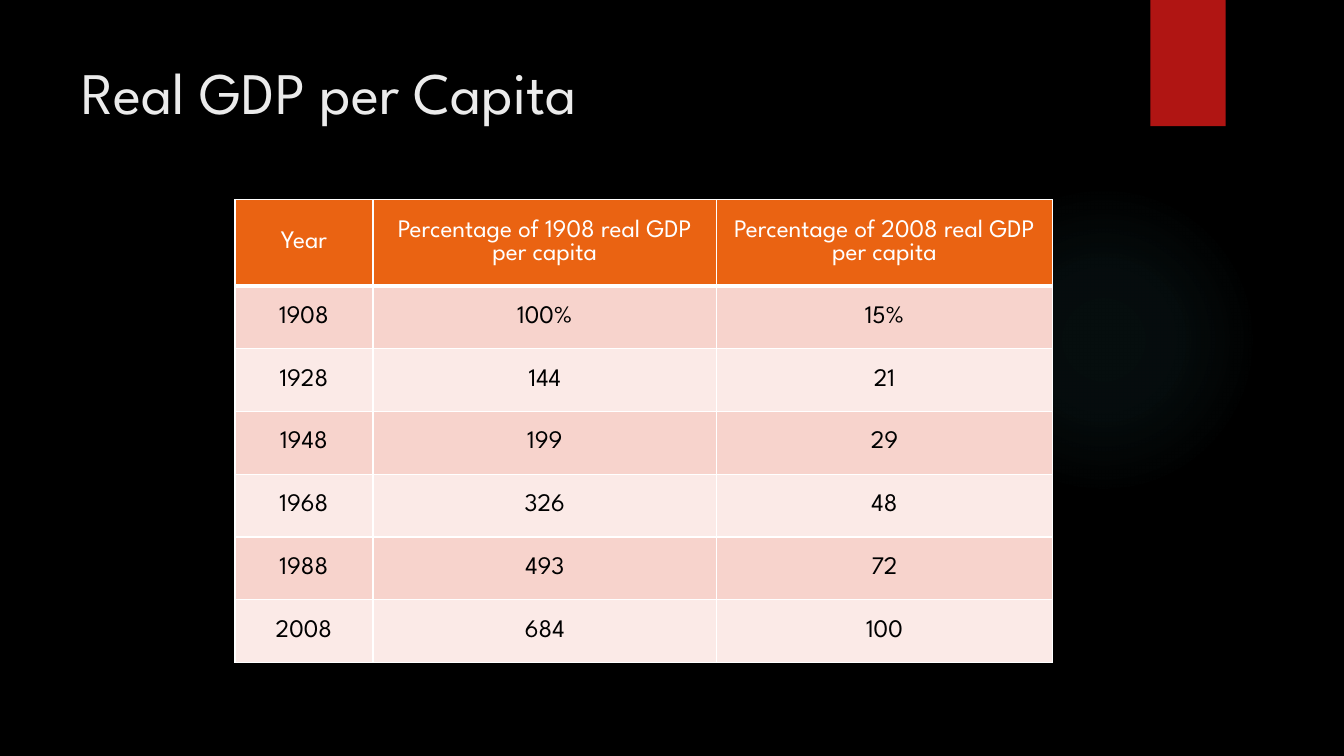
import pptx
import pptx.dml.color
import pptx.enum.shapes
import pptx.enum.text
import pptx.oxml
import pptx.oxml.ns
import pptx.util

Cm = pptx.util.Cm
RGBColor = pptx.dml.color.RGBColor

FONT = "League Spartan"
BLACK = RGBColor(0x00, 0x00, 0x00)
WHITE = RGBColor(0xFF, 0xFF, 0xFF)
TITLE_GREY = RGBColor(0xEB, 0xEB, 0xEB)
RED = RGBColor(0xB0, 0x15, 0x13)
GLOW_TEAL = RGBColor(0x50, 0xB9, 0xC1)
ORANGE = RGBColor(0xEA, 0x63, 0x12)
DARK_BAND = RGBColor(0xF7, 0xD3, 0xCC)
LIGHT_BAND = RGBColor(0xFB, 0xEA, 0xE7)

ROWS = [
    ("Year", "Percentage of 1908 real GDP per capita", "Percentage of 2008 real GDP per capita"),
    ("1908", "100%", "15%"),
    ("1928", "144", "21"),
    ("1948", "199", "29"),
    ("1968", "326", "48"),
    ("1988", "493", "72"),
    ("2008", "684", "100"),
]
COLUMN_WIDTHS = [3.48, 8.66, 8.46]
HEADER_HEIGHT, ROW_HEIGHT = 2.18, 1.58


def write_text(text_frame, text, size, color, alignment):
    paragraph = text_frame.paragraphs[0]
    paragraph.alignment = alignment
    run = paragraph.add_run()
    run.text = text
    run.font.name = FONT
    run.font.size = pptx.util.Pt(size)
    run.font.bold = False
    run.font.color.rgb = color


def add_plain_shape(kind, left, top, width, height):
    shape = slide.shapes.add_shape(kind, Cm(left), Cm(top), Cm(width), Cm(height))
    shape.shadow.inherit = False
    shape.line.fill.background()
    return shape


presentation = pptx.Presentation()
presentation.slide_width = Cm(33.87)
presentation.slide_height = Cm(19.05)
slide = presentation.slides.add_slide(presentation.slide_layouts[5])
slide.background.fill.solid()
slide.background.fill.fore_color.rgb = BLACK

# Faint round glow that fades out towards its edge
glow = add_plain_shape(pptx.enum.shapes.MSO_SHAPE.OVAL, 23.9, 4.65, 7.82, 7.82)
stops = "".join(
    f'<a:gs pos="{position * 1000}"><a:srgbClr val="{GLOW_TEAL}">'
    f'<a:alpha val="{opacity * 1000}"/></a:srgbClr></a:gs>'
    for position, opacity in [(0, 7), (36, 6), (69, 0), (100, 0)]
)
gradient = pptx.oxml.parse_xml(
    f'<a:gradFill {pptx.oxml.ns.nsdecls("a")} rotWithShape="1"><a:gsLst>{stops}</a:gsLst>'
    '<a:path path="circle"><a:fillToRect l="50000" t="50000" r="50000" b="50000"/></a:path>'
    "</a:gradFill>"
)
glow.element.spPr.find(pptx.oxml.ns.qn("a:prstGeom")).addnext(gradient)

# Red tab at the top edge
tab = add_plain_shape(pptx.enum.shapes.MSO_SHAPE.RECTANGLE, 28.99, 0, 1.9, 3.18)
tab.fill.solid()
tab.fill.fore_color.rgb = RED

# Title, brought in front of the decoration
title = slide.shapes.title
title.left, title.top, title.width, title.height = Cm(1.8), Cm(1.27), Cm(26.14), Cm(3.89)
title.text_frame.vertical_anchor = pptx.enum.text.MSO_ANCHOR.TOP
write_text(title.text_frame, "Real GDP per Capita", size=42, color=TITLE_GREY,
           alignment=pptx.enum.text.PP_ALIGN.LEFT)
tab.element.addnext(title.element)

# Table of real GDP per capita
body_count = len(ROWS) - 1
table = slide.shapes.add_table(
    len(ROWS), len(COLUMN_WIDTHS), Cm(5.92), Cm(5.03),
    Cm(sum(COLUMN_WIDTHS)), Cm(HEADER_HEIGHT + body_count * ROW_HEIGHT),
).table
table.horz_banding = False
for column, width in zip(table.columns, COLUMN_WIDTHS):
    column.width = Cm(width)

for row_index, values in enumerate(ROWS):
    is_header = row_index == 0
    table.rows[row_index].height = Cm(HEADER_HEIGHT if is_header else ROW_HEIGHT)
    band = DARK_BAND if row_index % 2 else LIGHT_BAND
    for column_index, value in enumerate(values):
        cell = table.cell(row_index, column_index)
        cell.margin_left = cell.margin_right = Cm(0.33)
        cell.margin_top = cell.margin_bottom = Cm(0.13)
        cell.vertical_anchor = pptx.enum.text.MSO_ANCHOR.MIDDLE
        cell.fill.solid()
        cell.fill.fore_color.rgb = ORANGE if is_header else band
        write_text(cell.text_frame, value, size=18, color=WHITE if is_header else BLACK,
                   alignment=pptx.enum.text.PP_ALIGN.CENTER)

        # White borders, heavier between the header and the first row
        properties = cell._tc.get_or_add_tcPr()
        for order, side in enumerate("LRTB"):
            heavy = (row_index, side) in [(0, "B"), (1, "T")]
            border = pptx.oxml.parse_xml(
                f'<a:ln{side} {pptx.oxml.ns.nsdecls("a")} w="{pptx.util.Pt(3 if heavy else 1)}">'
                f'<a:solidFill><a:srgbClr val="{WHITE}"/></a:solidFill></a:ln{side}>'
            )
            properties.insert(order, border)

presentation.save("out.pptx")
